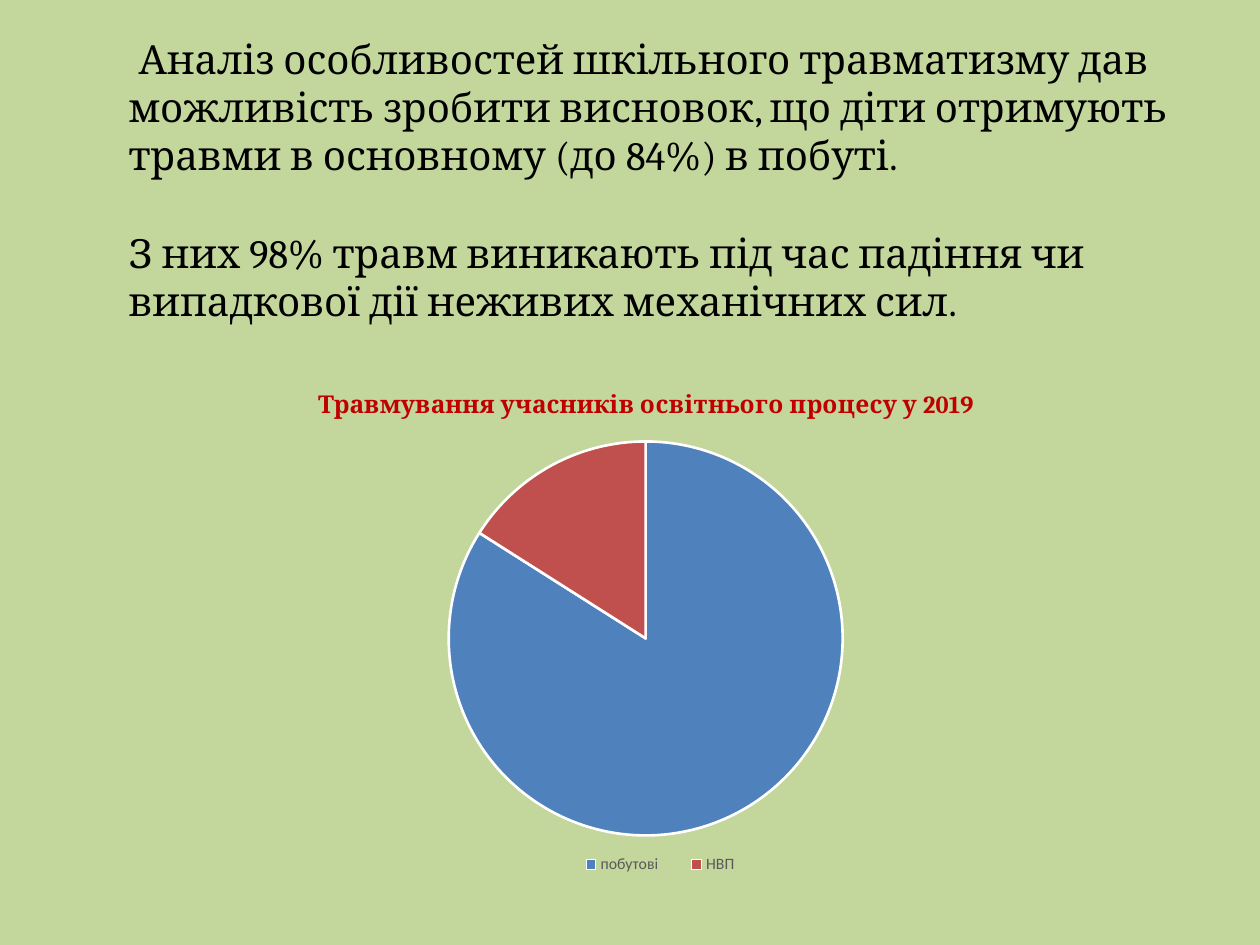
from lxml import etree
from pptx import Presentation
from pptx.chart.data import CategoryChartData
from pptx.dml.color import RGBColor
from pptx.enum.chart import XL_CHART_TYPE, XL_LEGEND_POSITION
from pptx.enum.text import MSO_ANCHOR, MSO_AUTO_SIZE, PP_ALIGN
from pptx.oxml.ns import qn
from pptx.util import Inches, Pt

PIE = XL_CHART_TYPE.PIE
BOTTOM = XL_LEGEND_POSITION.BOTTOM
TOP = MSO_ANCHOR.TOP
FIXED = MSO_AUTO_SIZE.NONE
LEFT = PP_ALIGN.LEFT
TITLE_ONLY = 5

COLORS = {
    "back": "C3D69B",
    "text": "000000",
    "head": "C00000",
    "legend": "595959",
    "home": "4F81BD",
    "school": "C0504D",
    "edge": "FFFFFF",
}
LINES = [
    "Аналіз особливостей шкільного травматизму дав можливість зробити "
    "висновок, що діти отримують травми в основному (до 84%) в побуті.",
    "З них 98% травм виникають під час падіння чи випадкової дії "
    "неживих механічних сил.",
]
HEAD = "Травмування учасників освітнього процесу у 2019"
CAUSES = [("побутові", 84, "home"), ("НВП", 16, "school")]


def rgb(name):
    return RGBColor.from_string(COLORS[name])


def style(font, face, size, color, bold=False):
    font.name = face
    font.size = Pt(size)
    font.bold = bold
    font.color.rgb = rgb(color)


def place(parent, index, target=None, **parts):
    """Give a chart part a manual layout, in fractions of the chart."""
    for old in parent.findall(qn("c:layout")):
        parent.remove(old)
    layout = etree.Element(qn("c:layout"))
    parent.insert(index, layout)
    manual = etree.SubElement(layout, qn("c:manualLayout"))
    if target:
        etree.SubElement(manual, qn("c:layoutTarget")).set("val", target)
    for axis in ("x", "y"):
        etree.SubElement(manual, qn(f"c:{axis}Mode")).set("val", "edge")
    for key, val in parts.items():
        etree.SubElement(manual, qn(f"c:{key}")).set("val", str(val))


def add_title(slide):
    title = slide.shapes.title
    title.left, title.top = Inches(0.92), Inches(0.17)
    title.width, title.height = Inches(8.67), Inches(2.75)
    frame = title.text_frame
    frame.text = "\n".join(LINES)
    frame.word_wrap = True
    frame.auto_size = FIXED
    frame.vertical_anchor = TOP
    frame.margin_top = Inches(0.1)
    for para in frame.paragraphs:
        para.alignment = LEFT
        para.line_spacing = 1.0
        style(para.runs[0].font, "Cambria", 23, "text")
    first, last = frame.paragraphs
    first._p.get_or_add_pPr().set("indent", str(Inches(0.08)))
    last.space_before = Pt(28)


def add_pie(slide):
    data = CategoryChartData()
    data.categories = [name for name, _, _ in CAUSES]
    data.add_series("Series 1", [val for _, val, _ in CAUSES])
    chart = slide.shapes.add_chart(
        PIE, Inches(1.25), Inches(2.92), Inches(7.75), Inches(4.17), data
    ).chart
    style(chart.font, "Calibri", 10, "text")

    chart.has_title = True
    frame = chart.chart_title.text_frame
    frame.text = HEAD
    style(frame.paragraphs[0].runs[0].font, "Cambria", 14, "head", True)
    place(chart.chart_title._element, 1, x=0.16, y=0.03)

    chart.has_legend = True
    legend = chart.legend
    legend.position = BOTTOM
    legend.include_in_layout = False
    style(legend.font, "Calibri", 9, "legend")
    place(legend._element, 1, x=0.41, y=0.91, w=0.21, h=0.07)

    plot = chart.plots[0]
    plot.vary_by_categories = True
    area = plot._element.getparent()
    place(area, 0, "inner", x=0.29, y=0.14, w=0.42, h=0.75)
    for i, (_, _, color) in enumerate(CAUSES):
        form = plot.series[0].points[i].format
        form.fill.solid()
        form.fill.fore_color.rgb = rgb(color)
        form.line.color.rgb = rgb("edge")
        form.line.width = Pt(1.5)


def main():
    deck = Presentation()
    deck.slide_width, deck.slide_height = Inches(10), Inches(7.5)
    slide = deck.slides.add_slide(deck.slide_layouts[TITLE_ONLY])
    fill = slide.background.fill
    fill.solid()
    fill.fore_color.rgb = rgb("back")
    add_title(slide)
    add_pie(slide)
    deck.save("out.pptx")


if __name__ == "__main__":
    main()
